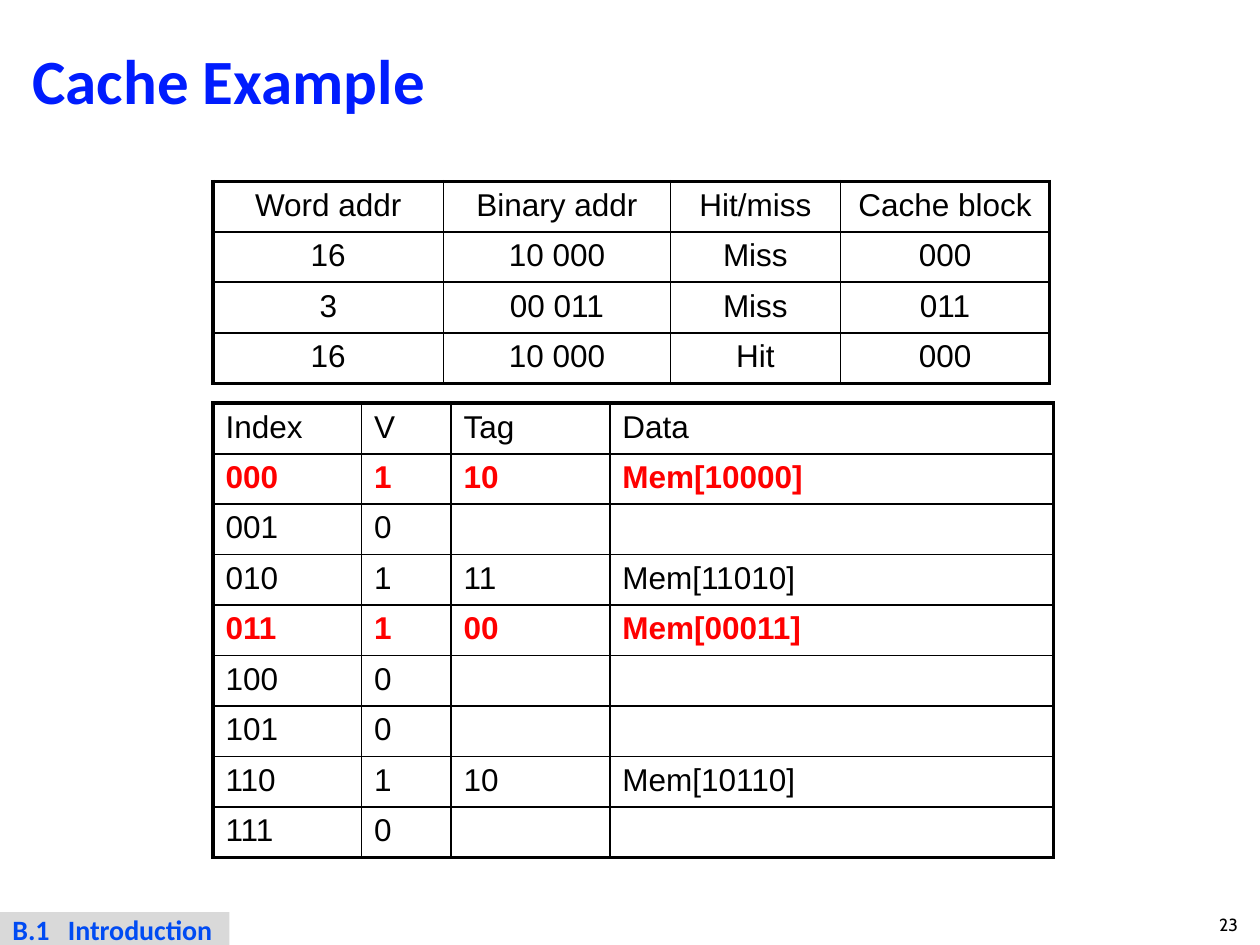
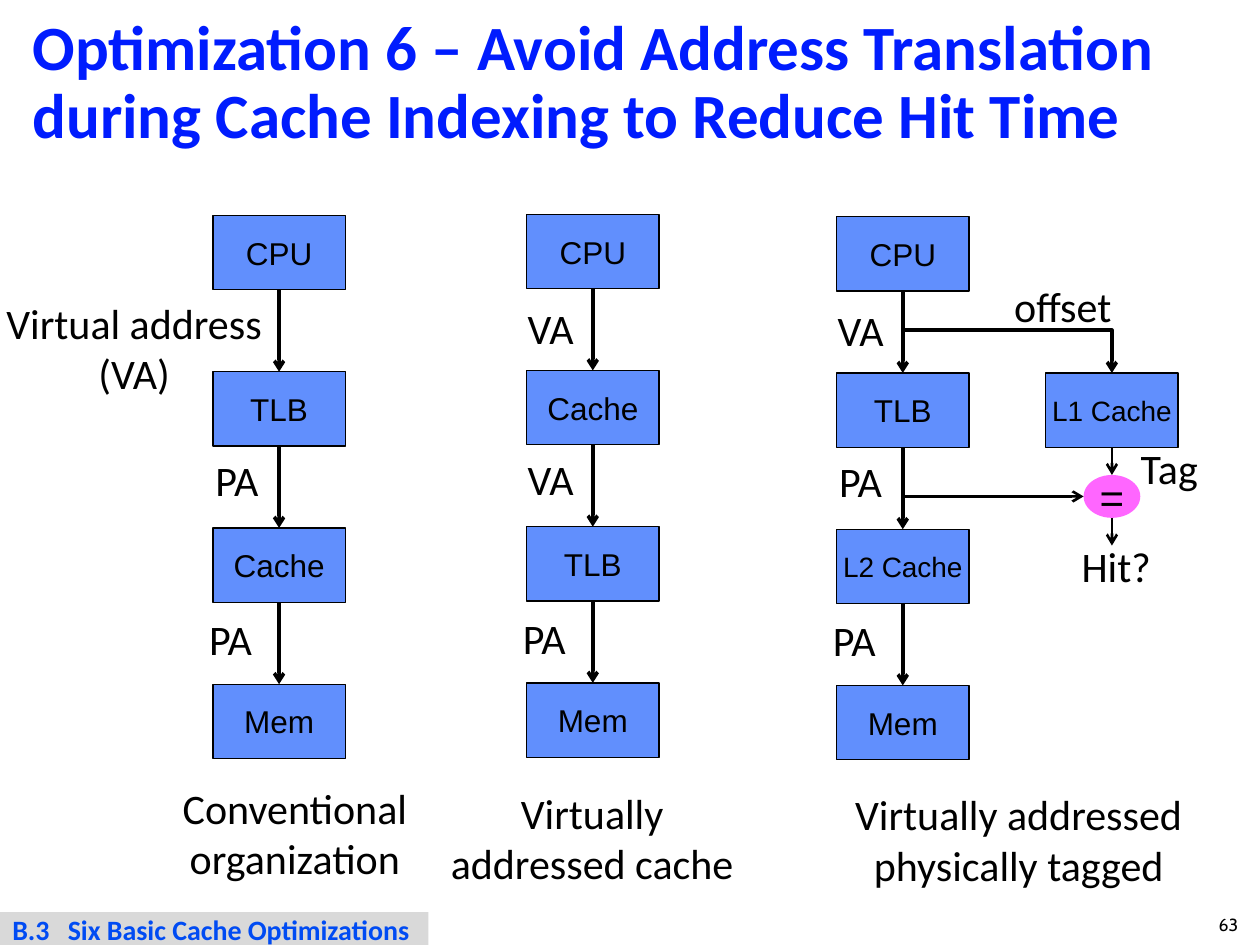
from lxml.etree import SubElement
from pptx import Presentation
from pptx.dml.color import RGBColor
from pptx.enum.shapes import MSO_CONNECTOR, MSO_SHAPE
from pptx.enum.text import MSO_ANCHOR, MSO_AUTO_SIZE, PP_ALIGN
from pptx.oxml import parse_xml
from pptx.oxml.ns import nsdecls, qn
from pptx.util import Inches, Pt

BLACK, RED, TITLE_BLUE, FOOTER_BLUE = "000000", "FF0000", "001CFE", "004BF3"
BOX_BLUE, PINK, GREY = "618FFD", "FF66FF", "D9D9D9"
W, H = 10, 7.5

ACCESSES = [
    ("Word addr", "Binary addr", "Hit/miss", "Cache block"),
    ("16", "10 000", "Miss", "000"),
    ("3", "00 011", "Miss", "011"),
    ("16", "10 000", "Hit", "000"),
]
BLOCKS = [
    ("Index", "V", "Tag", "Data"),
    ("000", "1", "10", "Mem[10000]"),
    ("001", "0", "", ""),
    ("010", "1", "11", "Mem[11010]"),
    ("011", "1", "00", "Mem[00011]"),
    ("100", "0", "", ""),
    ("101", "0", "", ""),
    ("110", "1", "10", "Mem[10110]"),
    ("111", "0", "", ""),
]
FILLED_BLOCKS = ("000", "011")
TABLE_LEFT, ROW_H = 1.69, 0.4

STACKS = [
    dict(at=(1.69, 1.71), units=("CPU", "TLB", "Cache", "Mem"), links=("", "PA", "PA"),
         caption=("Conventional organization", 1.02, 6.16, 2.64)),
    dict(at=(4.18, 1.7), units=("CPU", "Cache", "TLB", "Mem"), links=("VA", "VA", "PA"),
         caption=("Virtually addressed cache", 3.38, 6.2, 2.64)),
    dict(at=(6.64, 1.72), units=("CPU", "TLB", "L2 Cache", "Mem"), links=("VA", "PA", "PA"),
         caption=("Virtually addressed physically tagged", 6.33, 6.21, 3.51)),
]
LINK_OFFSETS = [(-0.15, 0.65), (-0.15, 1.85), (-0.2, 3.11)]
NOTES = [
    ("Virtual address\n(VA)", -0.07, 2.31, 2.27),
    ("Tag", 8.94, 3.46, 0.68),
    ("offset", 7.92, 2.18, 1.03),
    ("Hit?", 8.43, 4.24, 0.86),
]
BOX_W, BOX_H, PITCH = 1.05, 0.59, 1.24
L1_LEFT, L1_TOP = 8.3, 2.96
COMPARE = (8.6, 3.77, 0.45, 0.34)


def rgb(color):
    return RGBColor.from_string(color)


def write(tf, text, size, font, color=BLACK, bold=False, align=PP_ALIGN.LEFT):
    tf.text = text
    for p in tf.paragraphs:
        p.alignment = align
        for r in p.runs:
            r.font.size, r.font.name, r.font.bold = Pt(size), font, bold
            r.font.color.rgb = rgb(color)


def add_text(s, box, text, size, font, anchor=MSO_ANCHOR.TOP, **style):
    tf = s.shapes.add_textbox(*map(Inches, box)).text_frame
    tf.word_wrap, tf.vertical_anchor = True, anchor
    write(tf, text, size, font, **style)
    return tf


def add_label(s, text, x, y, w):
    tf = add_text(s, (x, y, w, 0.91 if w > 2 else 0.5), text, 24, "Calibri",
                  align=PP_ALIGN.CENTER)
    tf.auto_size = MSO_AUTO_SIZE.SHAPE_TO_FIT_TEXT


def add_fill(s, kind, box, color, outline=None):
    sp = s.shapes.add_shape(kind, *map(Inches, box))
    sp.shadow.inherit = False
    sp.fill.solid()
    sp.fill.fore_color.rgb = rgb(color)
    if outline:
        sp.line.color.rgb, sp.line.width = rgb(outline), Pt(0.75)
    else:
        sp.line.fill.background()
    return sp


def add_node(s, kind, box, color, text, size, outline=None):
    sp = add_fill(s, kind, box, color, outline)
    tf = sp.text_frame
    tf.word_wrap, tf.vertical_anchor = False, MSO_ANCHOR.MIDDLE
    write(tf, text, size, "Arial", align=PP_ALIGN.CENTER)
    return sp


def add_unit(s, x, y, text):
    return add_node(s, MSO_SHAPE.RECTANGLE, (x, y, BOX_W, BOX_H), BOX_BLUE, text,
                    16 if len(text) > 5 else 18, BLACK)


def add_arrow(s, start, end, width=2, kind=MSO_CONNECTOR.STRAIGHT):
    c = s.shapes.add_connector(kind, *map(Inches, start + end))
    c.line.color.rgb, c.line.width = rgb(BLACK), Pt(width)
    SubElement(c.line._get_or_add_ln(), qn("a:tailEnd"), type="arrow")
    SubElement(c.element.spPr, qn("a:effectLst"))
    return c


def set_borders(cell, widths):
    tcPr = cell._tc.get_or_add_tcPr()
    for i, (side, width) in enumerate(zip("LRTB", widths)):
        tcPr.insert(i, parse_xml(
            f'<a:ln{side} {nsdecls("a")} w="{Pt(width)}"><a:solidFill>'
            f'<a:srgbClr val="{BLACK}"/></a:solidFill></a:ln{side}>'))


def add_grid(s, top, cols, rows, rule, align, marked=()):
    frame = s.shapes.add_table(len(rows), len(cols), Inches(TABLE_LEFT), Inches(top),
                               Inches(sum(cols)), Inches(ROW_H * len(rows)))
    table = frame.table
    table.first_row = table.horz_banding = False
    for col, width in zip(table.columns, cols):
        col.width = Inches(width)
    across = [2.25, 1.5] + [rule] * (len(rows) - 2) + [2.25]
    down = [2.25] + [1] * (len(cols) - 1) + [2.25]
    for i, row in enumerate(rows):
        table.rows[i].height = Inches(ROW_H)
        hot = row[0] in marked
        for j, text in enumerate(row):
            cell = table.cell(i, j)
            cell.fill.background()
            write(cell.text_frame, text, 18, "Arial", RED if hot else BLACK, hot, align)
            set_borders(cell, (down[j], down[j + 1], across[i], across[i + 1]))


def add_slide(prs, title, section, section_name, footer_w, number):
    s = prs.slides.add_slide(prs.slide_layouts[6])
    tf = add_text(s, (0.16, 0.16, W - 0.32, 1.01), title, 36, "Calibri",
                  MSO_ANCHOR.MIDDLE, color=TITLE_BLUE, bold=True)
    tf.paragraphs[0].line_spacing = 0.9
    add_text(s, (W - 0.5, H - 0.33, 0.5, 0.33), number, 10, "Cabin",
             MSO_ANCHOR.MIDDLE, align=PP_ALIGN.CENTER)
    band = add_fill(s, MSO_SHAPE.RECTANGLE, (0, H - 0.26, footer_w, 0.26), GREY)
    tf = band.text_frame
    tf.margin_top = tf.margin_bottom = tf.margin_right = 0
    tf.word_wrap, tf.vertical_anchor = True, MSO_ANCHOR.TOP
    write(tf, f"{section}\t{section_name}", 16, "Calibri", FOOTER_BLUE, True)
    tabs = SubElement(tf.paragraphs[0]._p.get_or_add_pPr(), qn("a:tabLst"))
    SubElement(tabs, qn("a:tab"), pos=str(Inches(0.44)), algn="l")
    return s


def build_example(prs):
    s = add_slide(prs, "Cache Example", "B.1", "Introduction", 1.82, "23")
    add_grid(s, 3.2, (1.18, 0.71, 1.26, 3.52), BLOCKS, 1, PP_ALIGN.LEFT, FILLED_BLOCKS)
    add_grid(s, 1.44, (1.83, 1.8, 1.35, 1.66), ACCESSES, 1.5, PP_ALIGN.CENTER)


def build_organizations(prs):
    s = add_slide(prs, "Optimization 6 – Avoid Address Translation during Cache Indexing "
                  "to Reduce Hit Time", "B.3", "Six Basic Cache Optimizations", 3.4, "63")
    for stack in STACKS:
        x, y = stack["at"]
        units = [add_unit(s, x, y + i * PITCH, name) for i, name in enumerate(stack["units"])]
        for upper, lower in zip(units, units[1:]):
            c = add_arrow(s, (0, 0), (0, 0))
            c.begin_connect(upper, 2)
            c.end_connect(lower, 0)
        for text, (dx, dy) in zip(stack["links"], LINK_OFFSETS):
            if text:
                add_label(s, text, x + dx, y + dy, 0.68)
        add_label(s, *stack["caption"])

    l1 = add_unit(s, L1_LEFT, L1_TOP, "L1 Cache")
    cx, cy, cw, ch = COMPARE
    add_node(s, MSO_SHAPE.OVAL, COMPARE, PINK, "=", 24)
    mid_x, mid_y = L1_LEFT + BOX_W / 2, cy + ch / 2
    trunk = STACKS[-1]["at"][0] + BOX_W / 2
    elbow = add_arrow(s, (trunk, 2.62), (mid_x, L1_TOP), kind=MSO_CONNECTOR.ELBOW)
    elbow.element.spPr.find(qn("a:prstGeom")).set("prst", "bentConnector2")
    tag = add_arrow(s, (mid_x, L1_TOP + BOX_H), (mid_x, cy), 1.5)
    tag.begin_connect(l1, 2)
    add_arrow(s, (trunk, mid_y), (cx, mid_y), 1.5)
    add_arrow(s, (mid_x, cy + ch), (mid_x, cy + ch + 0.22), 1.5)
    for note in NOTES:
        add_label(s, *note)


def main():
    prs = Presentation()
    prs.slide_width, prs.slide_height = Inches(W), Inches(H)
    build_example(prs)
    build_organizations(prs)
    prs.save("out.pptx")


if __name__ == "__main__":
    main()
